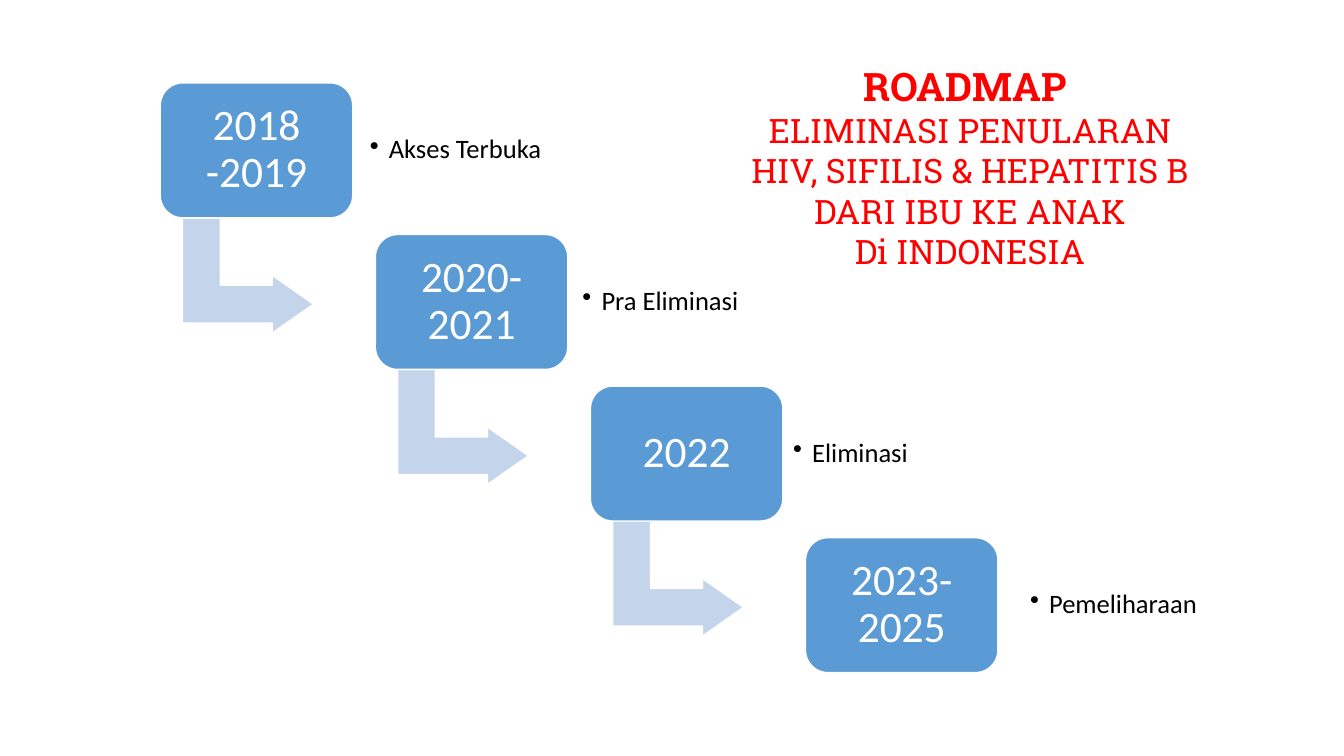
from lxml.etree import SubElement
from pptx import Presentation
from pptx.dml.color import RGBColor
from pptx.enum.shapes import MSO_SHAPE as Shape
from pptx.enum.text import MSO_ANCHOR as Anchor, MSO_AUTO_SIZE as AutoSize, PP_ALIGN as Align
from pptx.oxml.ns import qn
from pptx.util import Cm, Pt

# period, label, label left, label width, label inset (cm)
STAGES = [
    ("2018 -2019", "Akses Terbuka", 9.07, 9.3, 0.25),
    ("2020-2021", "Pra Eliminasi", 14.43, 10.21, 0.25),
    ("2022", "Eliminasi", 19.74, 3.53, 0.25),
    ("2023-2025", "Pemeliharaan", 25.76, 6.17, 0.2),
]
TITLE_LINES = [
    ("ROADMAP ", 28, True),
    ("ELIMINASI PENULARAN", 24, False),
    ("HIV, SIFILIS & HEPATITIS B", 24, False),
    ("DARI IBU KE ANAK", 24, False),
    ("Di INDONESIA", 24, False),
]
FIRST_LEFT, FIRST_TOP = 4.04, 2.09
STEP_X, STEP_Y = 5.42, 3.82


def color(value):
    return RGBColor.from_string(value)


class RoadmapSlide:
    BOX, ARROW, WHITE, BLACK, RED = "5B9BD5", "C4D5EB", "FFFFFF", "000000", "FF0000"
    BODY_FONT, TITLE_FONT = "Calibri", "Roboto Slab"

    def __init__(self, presentation):
        self.slide = presentation.slides.add_slide(presentation.slide_layouts[5])

    def run(self, paragraph, text, size, hex_color, font, bold=False):
        run = paragraph.add_run()
        run.text = text
        run.font.size, run.font.name, run.font.bold = Pt(size), font, bold
        run.font.color.rgb = color(hex_color)

    def frame(self, shape, inset, anchor=Anchor.MIDDLE):
        """Set wrapping, anchor and equal insets, and return the text frame."""
        frame = shape.text_frame
        frame.word_wrap, frame.auto_size = True, AutoSize.NONE
        frame.vertical_anchor = anchor
        frame.margin_left = frame.margin_right = Cm(inset)
        frame.margin_top = frame.margin_bottom = Cm(inset)
        return frame

    def shape(self, kind, left, top, width, height, fill, adjustments):
        shape = self.slide.shapes.add_shape(kind, Cm(left), Cm(top), Cm(width), Cm(height))
        shape.shadow.inherit = False
        shape.fill.solid()
        shape.fill.fore_color.rgb = color(fill)
        shape.line.color.rgb = color(self.WHITE)
        shape.line.width = Pt(1)
        for index, value in enumerate(adjustments):
            shape.adjustments[index] = value
        return shape

    def arrow(self, left, top):
        arrow = self.shape(Shape.BENT_UP_ARROW, left, top, 2.9, 3.3,
                           self.ARROW, (0.328, 0.25, 0.358))
        arrow.rotation = 90

    def period(self, left, top, text):
        box = self.shape(Shape.ROUNDED_RECTANGLE, left, top, 4.85, 3.4, self.BOX, (0.167,))
        paragraph = self.frame(box, 0.33).paragraphs[0]
        paragraph.alignment, paragraph.line_spacing = Align.CENTER, 0.9
        self.run(paragraph, text, 31, self.WHITE, self.BODY_FONT)

    def bullet_label(self, left, top, width, text, inset):
        box = self.slide.shapes.add_textbox(Cm(left), Cm(top), Cm(width), Cm(2.74))
        paragraph = self.frame(box, inset).paragraphs[0]
        paragraph.level, paragraph.line_spacing = 1, 0.9
        paragraph.alignment = Align.LEFT
        self.run(paragraph, text, 19, self.BLACK, self.BODY_FONT)
        properties = paragraph._p.get_or_add_pPr()
        properties.set("marL", str(Cm(0.48)))
        properties.set("indent", str(-Cm(0.48)))
        SubElement(properties, qn("a:buChar"), char="•")

    def title(self, lines):
        title = self.slide.shapes.title
        title.left, title.top, title.width, title.height = Cm(16.1), Cm(1.45), Cm(16.69), Cm(5.56)
        frame = self.frame(title, 0.13, Anchor.TOP)
        frame.margin_left = frame.margin_right = Cm(0.25)
        for index, (text, size, bold) in enumerate(lines):
            paragraph = frame.add_paragraph() if index else frame.paragraphs[0]
            paragraph.alignment, paragraph.line_spacing = Align.CENTER, 1.0
            paragraph.space_before = Pt(0)
            self.run(paragraph, text, size, self.RED, self.TITLE_FONT, bold)


def main():
    presentation = Presentation()
    presentation.slide_width, presentation.slide_height = Cm(33.87), Cm(19.05)
    roadmap = RoadmapSlide(presentation)
    roadmap.title(TITLE_LINES)
    for index, (period, label, label_left, label_width, inset) in enumerate(STAGES):
        left, top = FIRST_LEFT + index * STEP_X, FIRST_TOP + index * STEP_Y
        if index < len(STAGES) - 1:
            roadmap.arrow(left + 0.76, top + 3.2)
        roadmap.period(left, top, period)
        roadmap.bullet_label(label_left, top + 0.33, label_width, label, inset)
    presentation.save("out.pptx")


if __name__ == "__main__":
    main()
